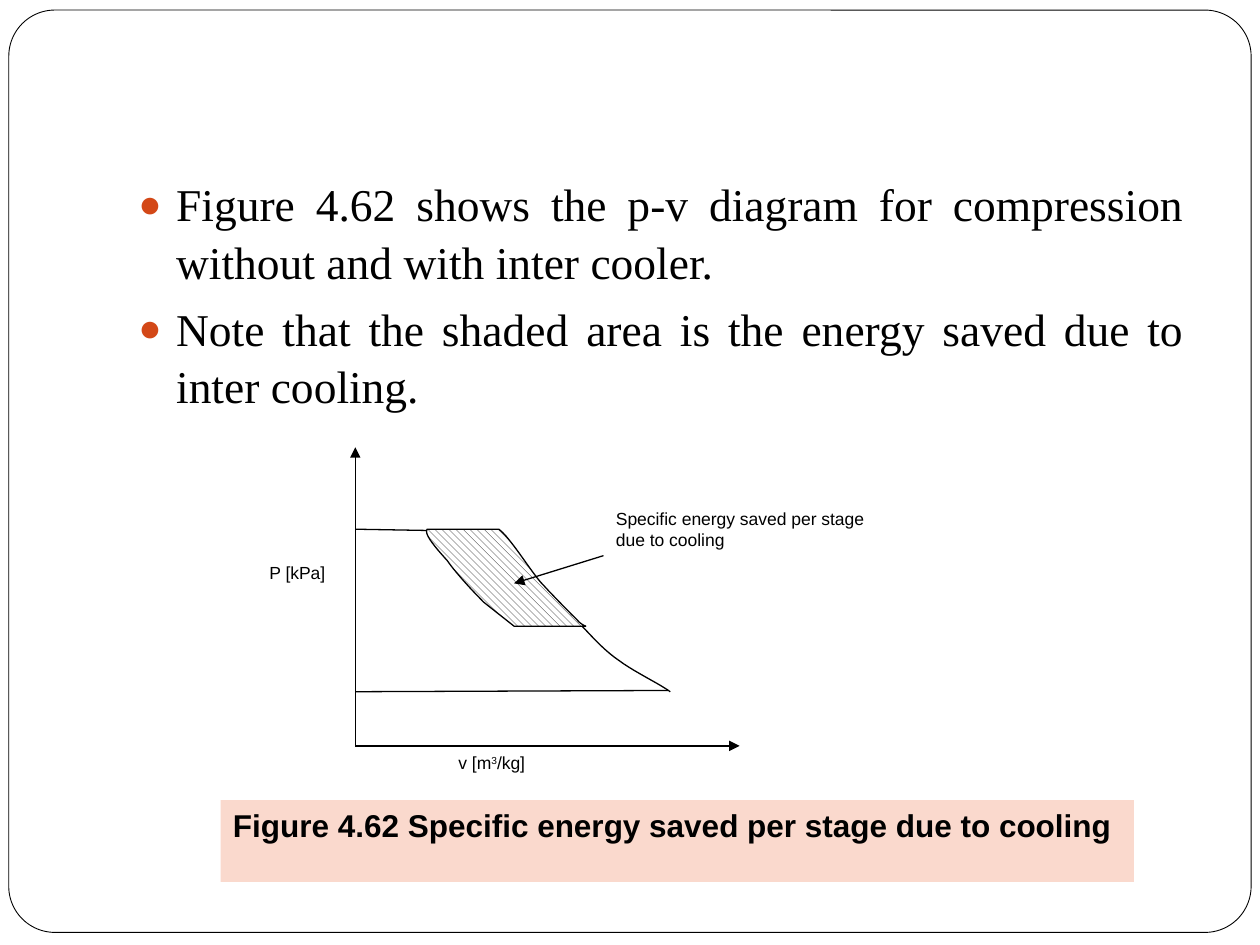
from typing import NamedTuple

from lxml import etree
from pptx import Presentation
from pptx.dml.color import RGBColor
from pptx.enum.dml import MSO_PATTERN
from pptx.enum.shapes import MSO_CONNECTOR, MSO_SHAPE
from pptx.enum.text import MSO_ANCHOR, PP_ALIGN
from pptx.oxml.ns import qn
from pptx.util import Inches, Pt

BLACK = RGBColor(0x00, 0x00, 0x00)
WHITE = RGBColor(0xFF, 0xFF, 0xFF)
PEACH = RGBColor(0xFA, 0xD9, 0xCD)
BULLET_COLOR = "D34817"
STRAIGHT = MSO_CONNECTOR.STRAIGHT
HATCH = MSO_PATTERN.WIDE_DOWNWARD_DIAGONAL
LEFT, JUSTIFY = PP_ALIGN.LEFT, PP_ALIGN.JUSTIFY
TOP = MSO_ANCHOR.TOP
CURVE_STEPS = 10

Point = tuple[float, float]


class Line(NamedTuple):
    start: Point
    end: Point
    arrow: bool = False


class Label(NamedTuple):
    runs: list[str]
    box: tuple[float, float, float, float]


ORIGIN = (2.82, 5.92)
LINES = [
    Line(ORIGIN, (2.82, 3.55), arrow=True),
    Line(ORIGIN, (5.87, 5.92), arrow=True),
    Line((2.82, 4.2), (3.38, 4.21)),
    Line((4.09, 4.97), (4.6, 4.97)),
    Line((2.82, 5.49), (5.3, 5.48)),
]
LEADER = Line((4.79, 4.41), (4.08, 4.63), arrow=True)

# Each segment holds one point (straight) or three points (cubic curve).
LOWER_CURVE = [
    [(4.62, 4.97)],
    [(4.67, 5.02), (4.79, 5.16), (4.91, 5.24)],
    [(5.03, 5.33), (5.24, 5.43), (5.32, 5.49)],
]
SAVED_AREA = [
    [(3.39, 4.2)],
    [(3.36, 4.24), (3.47, 4.36), (3.55, 4.45)],
    [(3.62, 4.55), (3.75, 4.69), (3.84, 4.78)],
    [(4.08, 4.97)],
    [(4.61, 4.97)],
    [(4.69, 4.97), (4.63, 4.98), (4.58, 4.92)],
    [(4.52, 4.86), (4.4, 4.74), (4.29, 4.62)],
    [(4.19, 4.5), (4.05, 4.27), (3.96, 4.2)],
    [(3.72, 4.2)],
]

# The odd runs of a label are superscript.
LABELS = [
    Label(["Specific energy saved per stage due to cooling"], (4.79, 3.98, 2.33, 1.08)),
    Label(["v [m", "3", "/kg]"], (3.54, 5.92, 2.15, 0.43)),
    Label(["P [kPa]"], (2.04, 4.41, 2.33, 0.65)),
]
BODY = [
    "Figure 4.62 shows the p-v diagram for compression without and with inter cooler.",
    "Note that the shaded area is the energy saved due to inter cooling.",
]
CAPTION = "Figure 4.62 Specific energy saved per stage due to cooling"


def add_runs(p, runs: list[str], *, size: float, font="Arial", bold=False, align=LEFT) -> None:
    """Fill a paragraph, raising every second run."""
    p.alignment = align
    for i, text in enumerate(runs):
        r = p.add_run()
        r.text = text
        r.font.size, r.font.name, r.font.bold = Pt(size), font, bold
        r.font.color.rgb = BLACK
        if i % 2:
            r.font._element.set("baseline", "30000")


def add_bullet(p) -> None:
    pPr = p._p.get_or_add_pPr()
    pPr.set("marL", str(Inches(0.3)))
    pPr.set("indent", str(-Inches(0.3)))
    color = etree.SubElement(pPr, qn("a:buClr"))
    etree.SubElement(color, qn("a:srgbClr"), val=BULLET_COLOR)
    etree.SubElement(pPr, qn("a:buSzPct"), val="85000")
    etree.SubElement(pPr, qn("a:buFont"), typeface="Arial")
    etree.SubElement(pPr, qn("a:buChar"), char="●")


def add_textbox(slide, box):
    tf = slide.shapes.add_textbox(*map(Inches, box)).text_frame
    tf.word_wrap = True
    return tf


def add_box(slide, kind, box, fill: RGBColor):
    sp = slide.shapes.add_shape(kind, *map(Inches, box))
    sp.shadow.inherit = False
    sp.fill.solid()
    sp.fill.fore_color.rgb = fill
    return sp


def set_outline(line, width=0.75) -> None:
    line.color.rgb = BLACK
    line.width = Pt(width)


def add_line(slide, line: Line) -> None:
    sp = slide.shapes.add_connector(STRAIGHT, *map(Inches, line.start + line.end))
    set_outline(sp.line)
    if line.arrow:
        etree.SubElement(sp.line._get_or_add_ln(), qn("a:tailEnd"), type="triangle")
    etree.SubElement(sp._element.spPr, qn("a:effectLst"))


def flatten(segments: list[list[Point]]) -> list[Point]:
    """Turn straight and cubic segments into a list of points."""
    points = []
    for seg in segments:
        if len(seg) == 1:
            points += seg
            continue
        controls = [points[-1], *seg]
        for step in range(1, CURVE_STEPS + 1):
            t = step / CURVE_STEPS
            u = 1 - t
            weights = (u**3, 3 * u * u * t, 3 * u * t * t, t**3)
            x, y = (sum(w * c[axis] for w, c in zip(weights, controls)) for axis in (0, 1))
            points.append((x, y))
    return points


def add_outline(slide, segments: list[list[Point]], *, hatched: bool) -> None:
    start, *rest = [(Inches(x), Inches(y)) for x, y in flatten(segments)]
    builder = slide.shapes.build_freeform(*start)
    builder.add_line_segments(rest, close=hatched)
    sp = builder.convert_to_shape()
    sp.shadow.inherit = False
    set_outline(sp.line)
    if hatched:
        sp.fill.patterned()
        sp.fill.pattern = HATCH
        sp.fill.fore_color.rgb = BLACK
        sp.fill.back_color.rgb = WHITE
    else:
        sp.fill.background()


def add_body(slide) -> None:
    tf = add_textbox(slide, (1, 1.33, 8.5, 5))
    for i, text in enumerate(BODY):
        p = tf.add_paragraph() if i else tf.paragraphs[0]
        p.space_before = Pt(5.8)
        p.line_spacing = 1.05
        add_bullet(p)
        add_runs(p, [text], size=26, font="Times New Roman", align=JUSTIFY)


def main() -> None:
    prs = Presentation()
    prs.slide_width, prs.slide_height = Inches(10), Inches(7.5)
    slide = prs.slides.add_slide(prs.slide_layouts[6])

    frame = add_box(slide, MSO_SHAPE.ROUNDED_RECTANGLE, (0.07, 0.08, 9.86, 7.32), WHITE)
    frame.adjustments[0] = 0.05
    set_outline(frame.line, 0.5)

    add_body(slide)
    for line in LINES:
        add_line(slide, line)
    add_outline(slide, LOWER_CURVE, hatched=False)
    add_outline(slide, SAVED_AREA, hatched=True)
    add_line(slide, LEADER)
    for label in LABELS:
        add_runs(add_textbox(slide, label.box).paragraphs[0], label.runs, size=10)

    caption = add_box(slide, MSO_SHAPE.RECTANGLE, (1.75, 6.35, 7.25, 0.65), PEACH)
    caption.line.fill.background()
    caption.text_frame.word_wrap = True
    caption.text_frame.vertical_anchor = TOP
    add_runs(caption.text_frame.paragraphs[0], [CAPTION], size=18, bold=True)

    prs.save("out.pptx")


if __name__ == "__main__":
    main()
